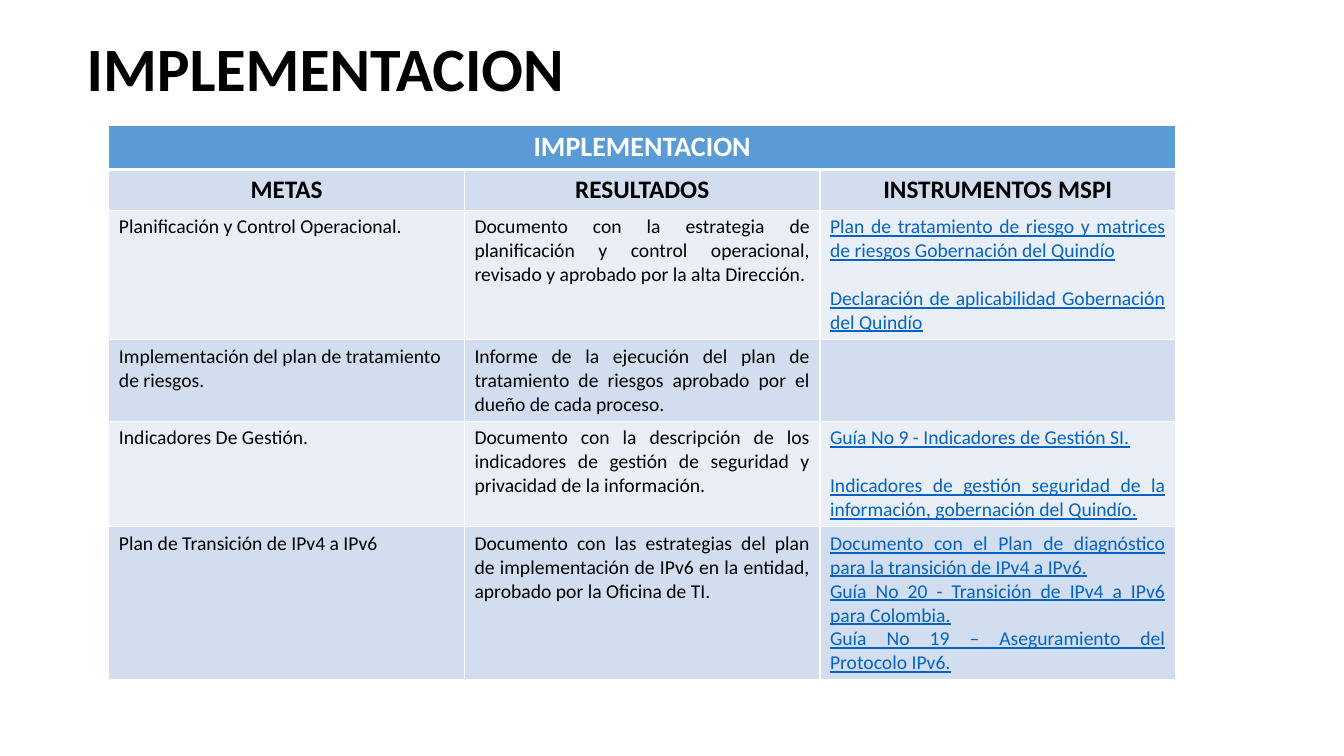
from lxml import etree
from pptx import Presentation
from pptx import util as u
from pptx.dml.color import RGBColor
from pptx.enum import text
from pptx.oxml import ns

BLACK = RGBColor(0x00, 0x00, 0x00)
WHITE = RGBColor(0xFF, 0xFF, 0xFF)
BLUE = RGBColor(0x5B, 0x9B, 0xD5)
BAND_DARK = RGBColor(0xD2, 0xDE, 0xEF)
BAND_LIGHT = RGBColor(0xEA, 0xEF, 0xF7)
LINK = RGBColor(0x05, 0x63, 0xC1)
LEFT, CENTER, JUSTIFY = (text.PP_ALIGN.LEFT, text.PP_ALIGN.CENTER,
                         text.PP_ALIGN.JUSTIFY)

TITLE = dict(size=u.Pt(44), bold=True, color=BLACK)
BANNER = dict(size=u.Pt(20), bold=True, color=WHITE)
HEADING = dict(size=u.Pt(18), bold=True, color=BLACK)
BODY = dict(size=u.Pt(14), bold=False, color=BLACK)
LINKED = dict(BODY, color=LINK, underline=True)

HEADINGS = ["METAS", "RESULTADOS", "INSTRUMENTOS MSPI"]
ROW_HEIGHTS = [0.41, 0.38, 1.19, 0.75, 0.97, 1.41]
GOALS = [
    ("Planificación y Control Operacional.",
     "Documento con la estrategia de planificación y control operacional, "
     "revisado y aprobado por la alta Dirección.",
     ["Plan de tratamiento de riesgo y matrices de riesgos Gobernación del Quindío",
      "Declaración de aplicabilidad Gobernación del Quindío"], 17),
    ("Implementación del plan de tratamiento de riesgos.",
     "Informe de la ejecución del plan de tratamiento de riesgos aprobado por "
     "el dueño de cada proceso.",
     [], 0),
    ("Indicadores De Gestión.",
     "Documento con la descripción de los indicadores de gestión de seguridad "
     "y privacidad de la información.",
     ["Guía No 9 - Indicadores de Gestión SI.",
      "Indicadores de gestión seguridad de la información, gobernación del Quindío."], 17),
    ("Plan de Transición de IPv4 a IPv6",
     "Documento con las estrategias del plan de implementación de IPv6 en la "
     "entidad, aprobado por la Oficina de TI.",
     ["Documento con el Plan de diagnóstico para la transición de IPv4 a IPv6.",
      "Guía No 20 - Transición de IPv4 a IPv6 para Colombia.",
      "Guía No 19 – Aseguramiento del Protocolo IPv6."], 0),
]


class SlideBuilder:
    """Holds the shared style and the current slide."""

    def __init__(self, prs, font="Calibri"):
        self.s = prs.slides.add_slide(prs.slide_layouts[5])
        self.font = font

    def format_run(self, r, style):
        r.font.name = self.font
        for name, value in style.items():
            if name == "color":
                r.font.color.rgb = value
            else:
                setattr(r.font, name, value)

    def paragraphs(self, tf, lines, style, align, gap=0):
        for i, line in enumerate(lines):
            p = tf.add_paragraph() if i else tf.paragraphs[0]
            p.alignment = align
            if i and gap:
                p.space_before = u.Pt(gap)
            r = p.add_run()
            r.text = line
            self.format_run(r, style)

    def title(self, line, left, top, width, height):
        sp = self.s.shapes.title
        sp.left, sp.top = u.Inches(left), u.Inches(top)
        sp.width, sp.height = u.Inches(width), u.Inches(height)
        tf = sp.text_frame
        tf.word_wrap = True
        tf.auto_size = text.MSO_AUTO_SIZE.NONE
        tf.vertical_anchor = text.MSO_ANCHOR.TOP
        self.paragraphs(tf, [line], TITLE, LEFT)
        tf.paragraphs[0].line_spacing = 0.9

    def table(self, heights, columns, left, top, width):
        frame = self.s.shapes.add_table(
            len(heights), columns, u.Inches(left), u.Inches(top),
            u.Inches(width), u.Inches(sum(heights)))
        for row, height in zip(frame.table.rows, heights):
            row.height = u.Inches(height)
        for column in frame.table.columns:
            column.width = u.Inches(width / columns)
        return frame.table

    def borders(self, cell, **widths):
        tc_pr = cell._tc.get_or_add_tcPr()
        for side in "LRTB":
            ln = etree.SubElement(tc_pr, ns.qn(f"a:ln{side}"),
                                  w=str(u.Pt(widths.get(side, 1))))
            fill = etree.SubElement(ln, ns.qn("a:solidFill"))
            etree.SubElement(fill, ns.qn("a:srgbClr"), val=str(WHITE))

    def cell(self, cell, lines, style, align, fill, gap=0, **widths):
        self.borders(cell, **widths)
        cell.fill.solid()
        cell.fill.fore_color.rgb = fill
        self.paragraphs(cell.text_frame, lines, style, align, gap)


def main():
    prs = Presentation()
    prs.slide_width, prs.slide_height = u.Inches(13.33), u.Inches(7.5)
    b = SlideBuilder(prs)
    b.title("IMPLEMENTACION", 0.76, 0.33, 11.5, 1.45)

    table = b.table(ROW_HEIGHTS, len(HEADINGS), 1.08, 1.24, 10.58)
    table.cell(0, 0).merge(table.cell(0, 2))
    for col, heading in enumerate(HEADINGS):
        banner = [] if col else ["IMPLEMENTACION"]
        b.cell(table.cell(0, col), banner, BANNER, CENTER, BLUE, B=3)
        b.cell(table.cell(1, col), [heading], HEADING, CENTER, BAND_DARK, T=3)
    for row, (goal, result, tools, gap) in enumerate(GOALS, 2):
        fill = BAND_DARK if row % 2 else BAND_LIGHT
        b.cell(table.cell(row, 0), [goal], BODY, LEFT, fill)
        b.cell(table.cell(row, 1), [result], BODY, JUSTIFY, fill)
        b.cell(table.cell(row, 2), tools, LINKED, JUSTIFY, fill, gap)
    prs.save("out.pptx")


if __name__ == "__main__":
    main()
